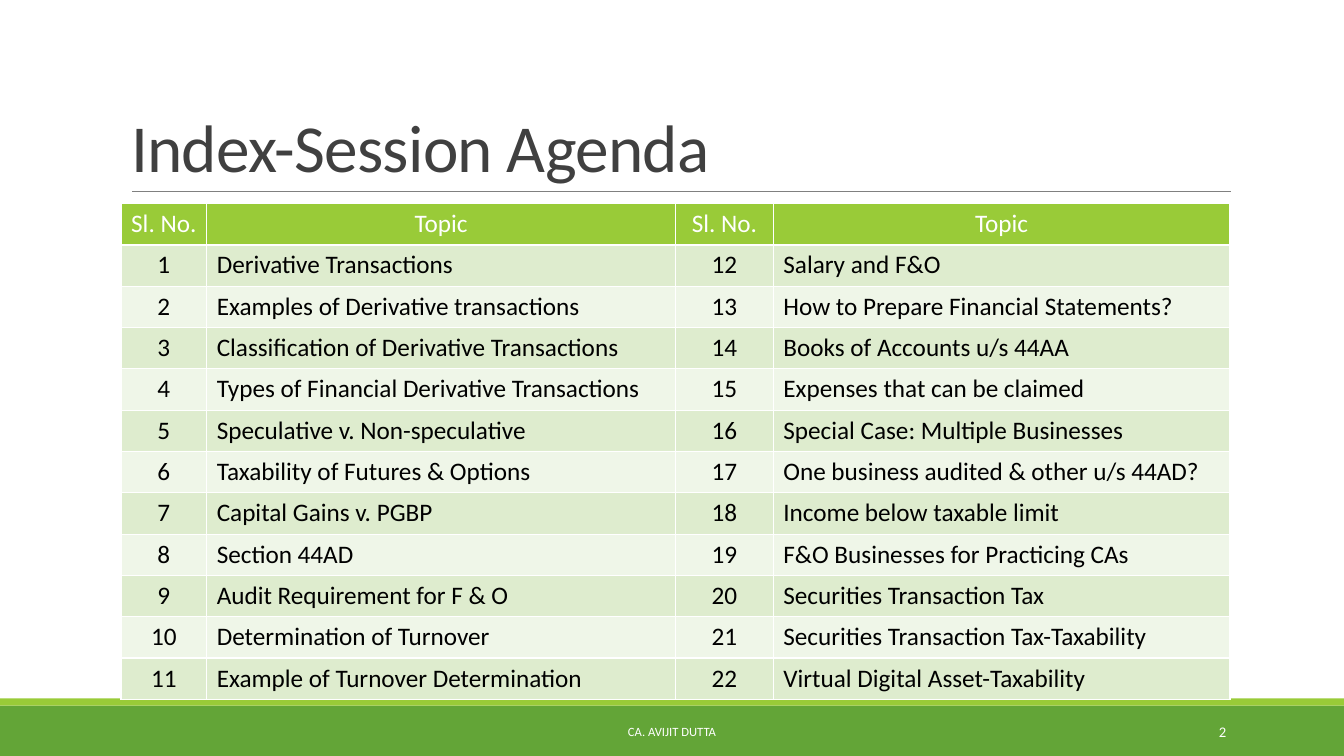
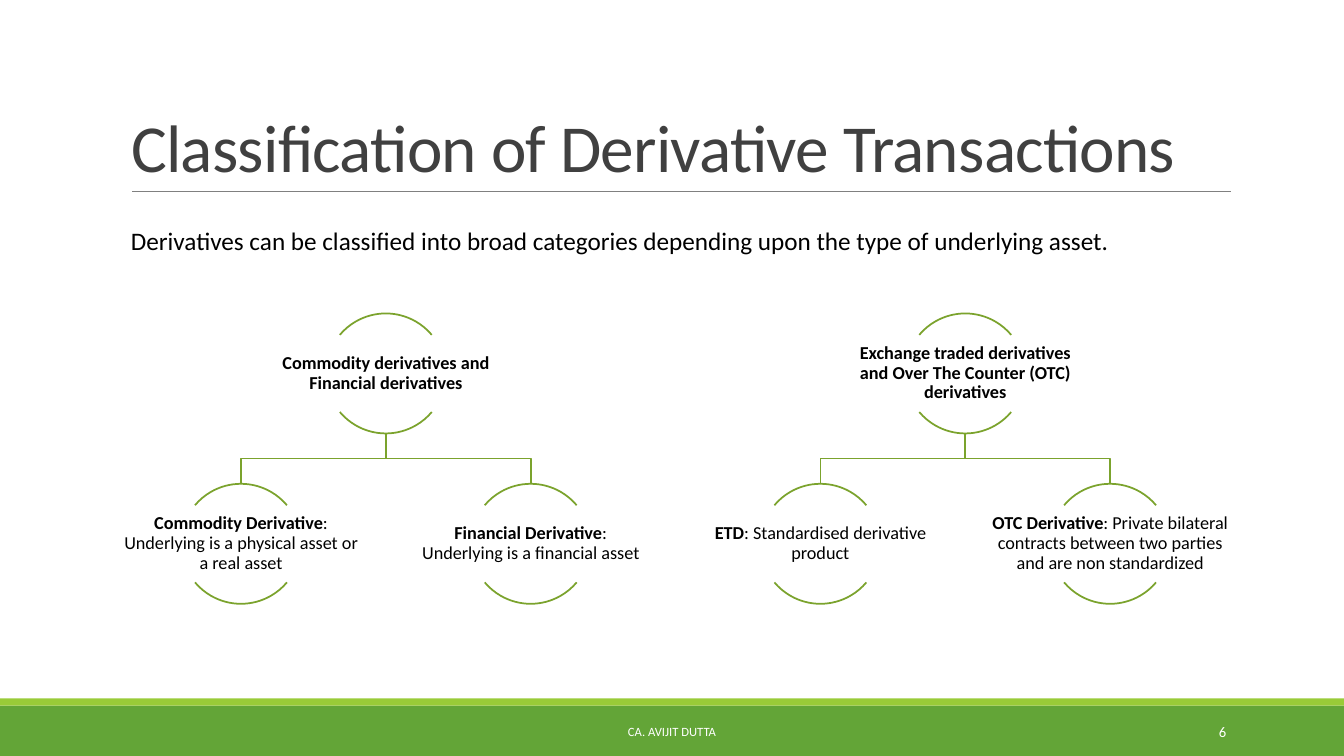
import dataclasses
from typing import Any

import lxml.etree
import pptx
import pptx.dml.color
import pptx.enum.shapes
import pptx.enum.text
import pptx.oxml.ns
import pptx.util

Inches = pptx.util.Inches
Align = pptx.enum.text.PP_ALIGN
Anchor = pptx.enum.text.MSO_ANCHOR
Shapes = pptx.enum.shapes.MSO_SHAPE

FONT = "Calibri"
WHITE, BLACK, TITLE_GREY, RULE_GREY = "FFFFFF", "000000", "404040", "808080"
GREEN, LIME, DIAGRAM_GREEN = "63A537", "99CB38", "7BA32D"
ROW_FILLS = ("DEECCE", "EFF6E8")
SLIDE_WIDTH, SLIDE_HEIGHT = 13.33, 7.5
TITLE_ONLY = 5

AGENDA_COLUMNS = (0.85, 4.65, 0.97, 4.53)
AGENDA_ROW_HEIGHT = 0.41
TOPICS = (
    "Derivative Transactions",
    "Examples of Derivative transactions",
    "Classification of Derivative Transactions",
    "Types of Financial Derivative Transactions",
    "Speculative v. Non-speculative",
    "Taxability of Futures & Options",
    "Capital Gains v. PGBP",
    "Section 44AD",
    "Audit Requirement for F & O",
    "Determination of Turnover",
    "Example of Turnover Determination",
    "Salary and F&O",
    "How to Prepare Financial Statements?",
    "Books of Accounts u/s 44AA",
    "Expenses that can be claimed",
    "Special Case: Multiple Businesses",
    "One business audited & other u/s 44AD?",
    "Income below taxable limit",
    "F&O Businesses for Practicing CAs",
    "Securities Transaction Tax",
    "Securities Transaction Tax-Taxability",
    "Virtual Digital Asset-Taxability",
)

CIRCLE = 1.19
LABEL_WIDTH, LABEL_HEIGHT = 2.37, 0.76
PARENT_TOP, CHILD_TOP = 3.11, 4.8
FIRST_CENTER, LAST_CENTER = 2.39, 11.01
ARC_ANGLES = ((220, 320), (40, 140))
ARC_UNITS_PER_DEGREE = 0.6


@dataclasses.dataclass(frozen=True)
class Node:
    term: str
    definition: str = ""


@dataclasses.dataclass(frozen=True)
class Branch:
    parent: Node
    children: tuple[Node, ...]


BRANCHES = (
    Branch(
        Node("Commodity derivatives and Financial derivatives"),
        (
            Node("Commodity Derivative", ": Underlying is a physical asset or a real asset"),
            Node("Financial Derivative", ": Underlying is a financial asset"),
        ),
    ),
    Branch(
        Node("Exchange traded derivatives and Over The Counter (OTC) derivatives"),
        (
            Node("ETD", ": Standardised derivative product"),
            Node(
                "OTC Derivative",
                ": Private bilateral contracts between two parties and are non standardized",
            ),
        ),
    ),
)


def color(value: str) -> pptx.dml.color.RGBColor:
    return pptx.dml.color.RGBColor.from_string(value)


def box(left: float, top: float, width: float, height: float) -> tuple[int, ...]:
    return tuple(Inches(length) for length in (left, top, width, height))


def style_paragraph(paragraph: Any, size: float, text_color: str, alignment: Any = Align.LEFT) -> None:
    paragraph.alignment = alignment
    paragraph.font.name = FONT
    paragraph.font.size = pptx.util.Pt(size)
    paragraph.font.color.rgb = color(text_color)


def style_line(shape: Any, line_color: str, width: float) -> None:
    shape.line.color.rgb = color(line_color)
    shape.line.width = pptx.util.Pt(width)


def add_text(
    slide: Any, place: tuple[int, ...], text: str, size: float, text_color: str,
    alignment: Any = Align.LEFT, anchor: Any = Anchor.TOP, wrap: bool = True,
) -> Any:
    frame = slide.shapes.add_textbox(*place).text_frame
    frame.word_wrap = wrap
    frame.vertical_anchor = anchor
    frame.text = text
    style_paragraph(frame.paragraphs[0], size, text_color, alignment)
    return frame


def add_band(slide: Any, top: float, height: float, fill: str) -> Any:
    band = slide.shapes.add_shape(Shapes.RECTANGLE, *box(0, top, SLIDE_WIDTH, height))
    band.shadow.inherit = False
    band.fill.solid()
    band.fill.fore_color.rgb = color(fill)
    band.line.fill.background()
    return band


def add_title_rule(slide: Any) -> Any:
    rule = slide.shapes.add_connector(
        pptx.enum.shapes.MSO_CONNECTOR.STRAIGHT,
        Inches(1.31), Inches(1.9), Inches(12.21), Inches(1.9),
    )
    style_line(rule, RULE_GREY, 0.5)
    lxml.etree.SubElement(rule.element.spPr, pptx.oxml.ns.qn("a:effectLst"))
    return rule


def decorate_layout(layout: Any, slide: Any) -> None:
    """Draw the bands and rule on a slide, then move them behind the layout's placeholders."""
    decorations = (
        add_band(slide, 7, 0.5, GREEN),
        add_band(slide, 6.93, 0.07, LIME),
        add_title_rule(slide),
    )
    first_child = 2
    for index, shape in enumerate(decorations):
        shape.element.xpath(".//p:cNvPr")[0].set("id", str(20 + index))
        layout.element.cSld.spTree.insert(first_child + index, shape.element)


def add_slide(presentation: Any, title: str, number: int) -> Any:
    slide = presentation.slides.add_slide(presentation.slide_layouts[TITLE_ONLY])
    title_shape = slide.shapes.title
    title_shape.left, title_shape.top, title_shape.width, title_shape.height = box(1.2, 0.31, 11, 1.59)
    frame = title_shape.text_frame
    frame.text = title
    frame.vertical_anchor = Anchor.BOTTOM
    frame.auto_size = pptx.enum.text.MSO_AUTO_SIZE.NONE
    paragraph = frame.paragraphs[0]
    style_paragraph(paragraph, 48, TITLE_GREY)
    paragraph.line_spacing = 0.85
    title_shape.element.xpath(".//a:defRPr")[0].set("spc", "-50")
    add_text(slide, box(4.03, 7.06, 5.27, 0.4), "CA. AVIJIT DUTTA", 9, WHITE, Align.CENTER, Anchor.MIDDLE)
    add_text(slide, box(10.83, 7.06, 1.43, 0.4), str(number), 10.5, WHITE, Align.RIGHT, Anchor.MIDDLE)
    return slide


def add_agenda(slide: Any) -> None:
    half = len(TOPICS) // 2
    rows = [("Sl. No.", "Topic") * 2]
    for index in range(half):
        rows.append((str(index + 1), TOPICS[index], str(index + half + 1), TOPICS[index + half]))
    table = slide.shapes.add_table(
        len(rows), len(AGENDA_COLUMNS),
        *box(1.2, 2.02, sum(AGENDA_COLUMNS), AGENDA_ROW_HEIGHT * len(rows)),
    ).table
    for column, width in zip(table.columns, AGENDA_COLUMNS):
        column.width = Inches(width)
    for row_index, texts in enumerate(rows):
        is_header = row_index == 0
        for column_index, text in enumerate(texts):
            cell = table.cell(row_index, column_index)
            cell.text = text
            cell.fill.solid()
            cell.fill.fore_color.rgb = color(LIME if is_header else ROW_FILLS[(row_index - 1) % 2])
            centered = is_header or column_index % 2 == 0
            paragraph = cell.text_frame.paragraphs[0]
            style_paragraph(
                paragraph, 18, WHITE if is_header else BLACK, Align.CENTER if centered else Align.LEFT
            )
            paragraph.runs[0].font.bold = False


def add_node(slide: Any, node: Node, center: float, top: float) -> None:
    for angles in ARC_ANGLES:
        arc = slide.shapes.add_shape(Shapes.ARC, *box(center - CIRCLE / 2, top, CIRCLE, CIRCLE))
        arc.shadow.inherit = False
        arc.fill.background()
        style_line(arc, DIAGRAM_GREEN, 1.25)
        for index, angle in enumerate(angles):
            arc.adjustments[index] = angle * ARC_UNITS_PER_DEGREE
    label_top = top + (CIRCLE - LABEL_HEIGHT) / 2
    frame = add_text(
        slide, box(center - LABEL_WIDTH / 2, label_top, LABEL_WIDTH, LABEL_HEIGHT),
        node.term, 13, BLACK, Align.CENTER, Anchor.MIDDLE,
    )
    frame.margin_left = frame.margin_right = frame.margin_top = frame.margin_bottom = Inches(0.01)
    paragraph = frame.paragraphs[0]
    paragraph.line_spacing = 0.9
    paragraph.runs[0].font.bold = True
    if node.definition:
        paragraph.add_run().text = node.definition


def add_elbow(slide: Any, parent_center: float, child_center: float) -> None:
    start = PARENT_TOP + CIRCLE
    middle = (start + CHILD_TOP) / 2
    builder = slide.shapes.build_freeform(Inches(parent_center), Inches(start))
    corners = ((parent_center, middle), (child_center, middle), (child_center, CHILD_TOP))
    builder.add_line_segments([(Inches(x), Inches(y)) for x, y in corners], close=False)
    elbow = builder.convert_to_shape()
    elbow.shadow.inherit = False
    elbow.fill.background()
    style_line(elbow, DIAGRAM_GREEN, 1.25)


def add_classification(slide: Any) -> None:
    child_count = sum(len(branch.children) for branch in BRANCHES)
    step = (LAST_CENTER - FIRST_CENTER) / (child_count - 1)
    position = 0
    for branch in BRANCHES:
        centers = [FIRST_CENTER + step * (position + index) for index in range(len(branch.children))]
        position += len(centers)
        parent_center = sum(centers) / len(centers)
        for center in centers:
            add_elbow(slide, parent_center, center)
        add_node(slide, branch.parent, parent_center, PARENT_TOP)
        for child, center in zip(branch.children, centers):
            add_node(slide, child, center, CHILD_TOP)


def main() -> None:
    presentation = pptx.Presentation()
    presentation.slide_width = Inches(SLIDE_WIDTH)
    presentation.slide_height = Inches(SLIDE_HEIGHT)

    agenda = add_slide(presentation, "Index-Session Agenda", 2)
    decorate_layout(agenda.slide_layout, agenda)
    add_agenda(agenda)

    classification = add_slide(presentation, "Classification of Derivative Transactions", 6)
    add_text(
        classification, box(1.2, 2.19, 10.03, 0.71),
        "Derivatives can be classified into broad categories depending upon the type of underlying asset.",
        18, BLACK, wrap=False,
    )
    add_classification(classification)

    presentation.save("out.pptx")


if __name__ == "__main__":
    main()
